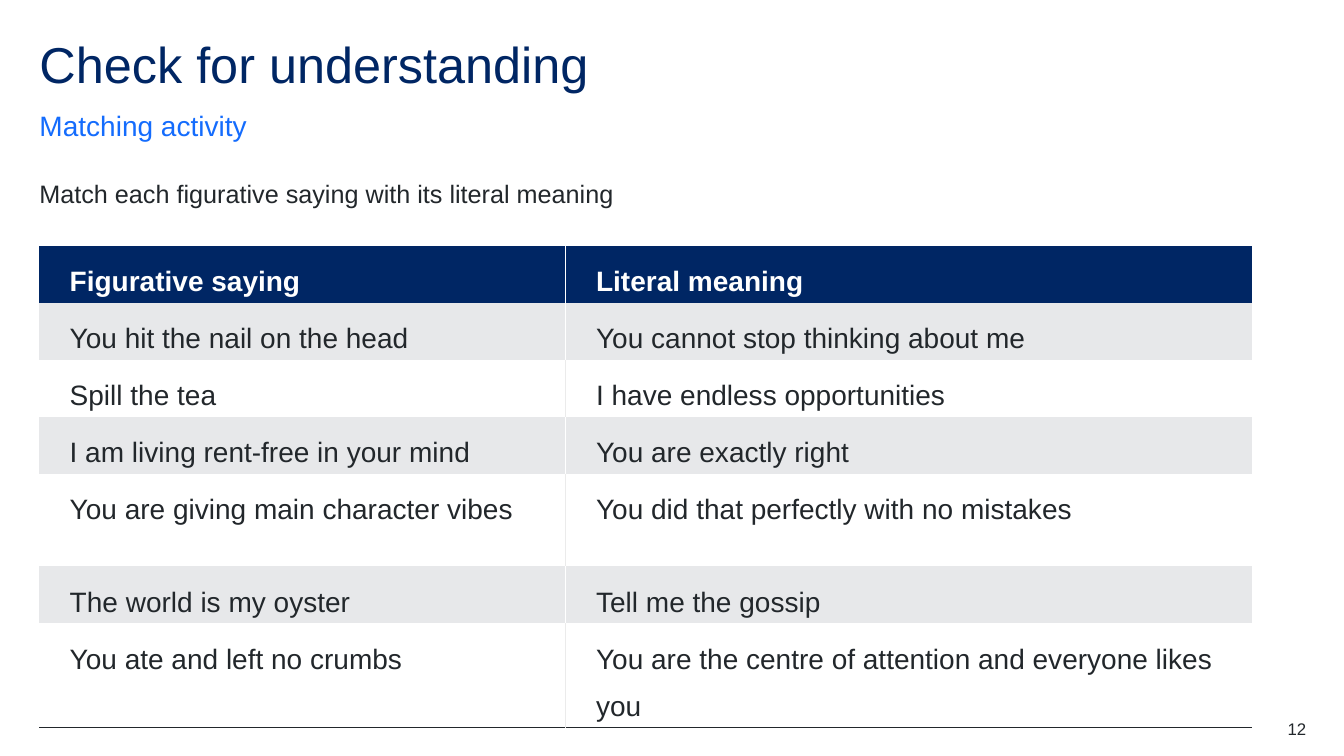
from dataclasses import dataclass

from pptx import Presentation
from pptx import util as u
from pptx.dml.color import RGBColor
from pptx.enum import text
from pptx.oxml.ns import qn
from lxml import etree

Pt = u.Pt

# Content
TITLE = "Check for understanding"
SUBTITLE = "Matching activity"
TASK = "Match each figurative saying with its literal meaning"
PAGE_NUMBER = "12"
HEADINGS = ("Figurative saying", "Literal meaning")
SAYINGS = [
    ("You hit the nail on the head", "You cannot stop thinking about me"),
    ("Spill the tea", "I have endless opportunities"),
    ("I am living rent-free in your mind", "You are exactly right"),
    ("You are giving main character vibes", "You did that perfectly with no mistakes"),
    ("The world is my oyster", "Tell me the gossip"),
    ("You ate and left no crumbs", "You are the centre of attention and everyone likes you"),
]


@dataclass(frozen=True)
class Theme:
    font: str = "Arial"
    navy: str = "002664"
    blue: str = "146CFD"
    ink: str = "22272B"
    band: str = "E7E8EA"
    rule: str = "EBEBEB"
    white: str = "FFFFFF"
    title_size: int = 36
    table_size: int = 20
    task_size: int = 18
    number_size: int = 12


theme = Theme()

# Layout, in points
LEFT = 28.2
COLUMNS = (376, 490)
ROW, TALL_ROW = 38.2, 66.2
TALL_ROWS = (4, 6)


def style(para, size, color, bold=False):
    for span in para.runs:
        span.font.name = theme.font
        span.font.size = Pt(size)
        span.font.bold = bold
        span.font.color.rgb = RGBColor.from_string(color)


def fill_box(box, words, area, size, color, anchor=text.MSO_ANCHOR.TOP):
    box.left, box.top, box.width, box.height = map(Pt, area)
    frame = box.text_frame
    frame.text = words
    frame.word_wrap = True
    frame.auto_size = text.MSO_AUTO_SIZE.NONE
    frame.vertical_anchor = anchor
    frame.margin_left = frame.margin_right = frame.margin_top = frame.margin_bottom = 0
    para = frame.paragraphs[0]
    para.alignment = text.PP_ALIGN.LEFT
    para.space_before = Pt(0)
    style(para, size, color)
    return para


def set_borders(cell, colors):
    props = cell._tc.get_or_add_tcPr()
    for side in "LRTB":
        line = etree.SubElement(props, qn(f"a:ln{side}"), w=str(Pt(1)))
        if side in colors:
            solid = etree.SubElement(line, qn("a:solidFill"))
            etree.SubElement(solid, qn("a:srgbClr"), val=colors[side])
        else:
            etree.SubElement(line, qn("a:noFill"))


def fill_cell(cell, words, fill, color, borders, bold):
    set_borders(cell, borders)
    cell.fill.solid()
    cell.fill.fore_color.rgb = RGBColor.from_string(fill)
    cell.text = words
    para = cell.text_frame.paragraphs[0]
    para._p.get_or_add_pPr().set("marL", str(Pt(14.4)))
    para.line_spacing = 1.5
    para.space_after = Pt(12)
    style(para, theme.table_size, color, bold)


deck = Presentation()
deck.slide_width, deck.slide_height = Pt(960), Pt(540)
page = deck.slides.add_slide(deck.slide_layouts[1])

# Title and subtitle
para = fill_box(page.shapes.title, TITLE, (LEFT, 28.2, 793.4, 43.2), theme.title_size, theme.navy)
para.line_spacing = 0.9
para = fill_box(page.placeholders[1], SUBTITLE, (LEFT, 77, 793.4, 24.5),
                theme.table_size, theme.blue, text.MSO_ANCHOR.BOTTOM)
props = para._p.get_or_add_pPr()
props.set("marL", "0")
props.set("indent", "0")
etree.SubElement(props, qn("a:buNone"))
para.line_spacing = 1.5
para.space_after = Pt(12)

# Task and page number
box = page.shapes.add_textbox(0, 0, 0, 0)
fill_box(box, TASK, (LEFT, 127.4, 856.8, 21.6), theme.task_size, theme.ink)

# Matching table
rows = [HEADINGS, *SAYINGS]
heights = [TALL_ROW if i in TALL_ROWS else ROW for i in range(len(rows))]
table = page.shapes.add_table(len(rows), len(COLUMNS), Pt(LEFT), Pt(175.7),
                              Pt(sum(COLUMNS)), Pt(sum(heights))).table
table.horz_banding = False
for column, width in zip(table.columns, COLUMNS):
    column.width = Pt(width)
for i, (words, height) in enumerate(zip(rows, heights)):
    table.rows[i].height = Pt(height)
    header, shaded = i == 0, i % 2 == 1
    fill = theme.navy if header else theme.band if shaded else theme.white
    divider = theme.white if header or shaded else theme.rule
    for j, entry in enumerate(words):
        borders = {"L" if j else "R": divider}
        if i == len(rows) - 1:
            borders["B"] = theme.ink
        fill_cell(table.cell(i, j), entry, fill,
                  theme.white if header else theme.ink, borders, header)

box = page.shapes.add_textbox(0, 0, 0, 0)
para = fill_box(box, PAGE_NUMBER, (876.2, 513.4, 56.9, 14.4), theme.number_size, theme.ink)
para.alignment = text.PP_ALIGN.RIGHT

deck.save("out.pptx")
